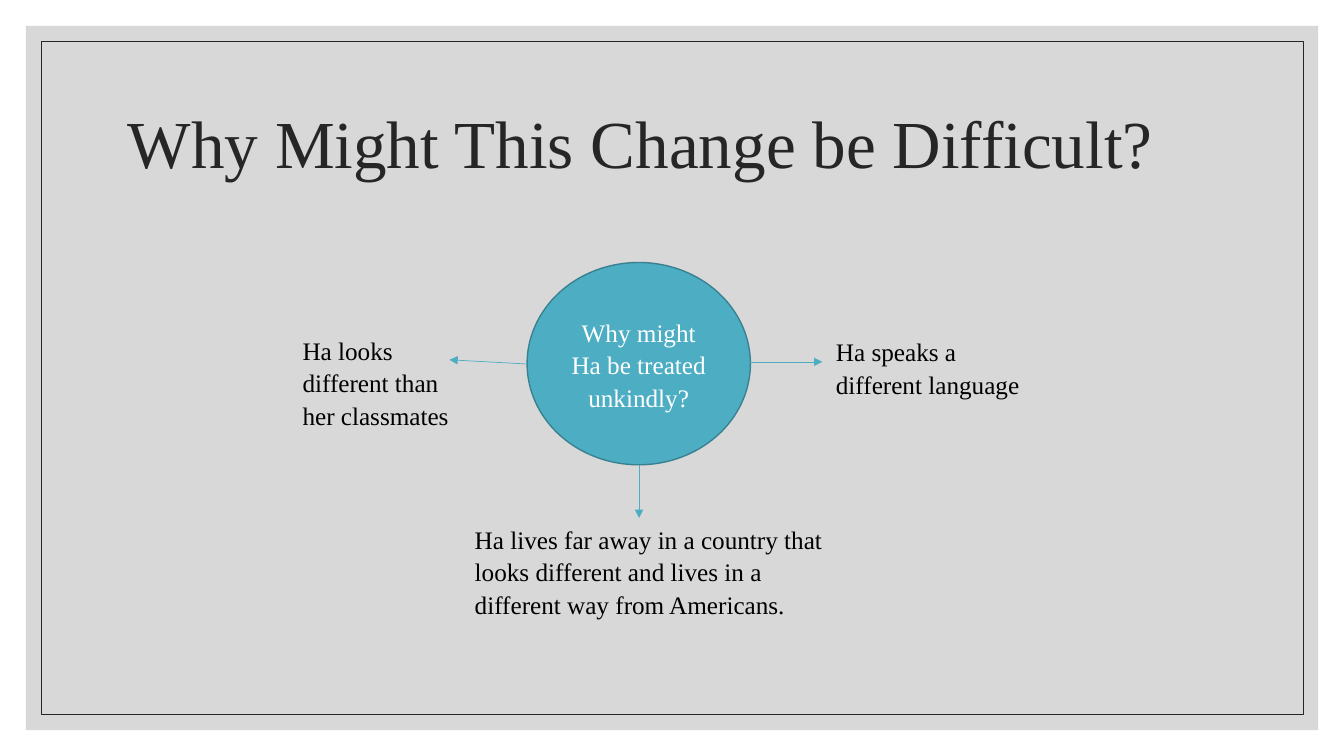
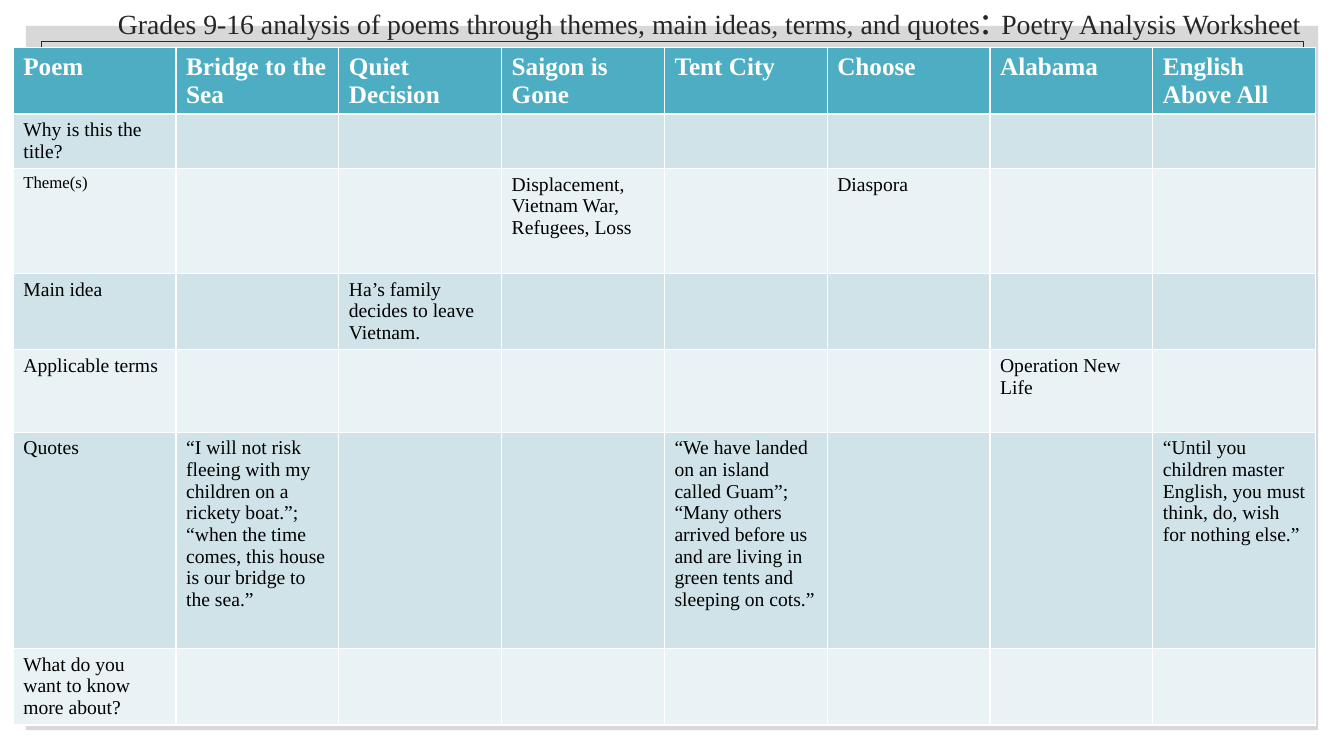
from lxml import etree
from pptx import Presentation
from pptx.dml.color import RGBColor
from pptx.enum.shapes import MSO_CONNECTOR, MSO_SHAPE
from pptx.enum.text import MSO_ANCHOR, MSO_AUTO_SIZE, PP_ALIGN
from pptx.oxml.ns import qn
from pptx.util import Pt

RECT, OVAL = MSO_SHAPE.RECTANGLE, MSO_SHAPE.OVAL
LINE = MSO_CONNECTOR.STRAIGHT
MIDDLE = MSO_ANCHOR.MIDDLE
LEFT, CENTER = PP_ALIGN.LEFT, PP_ALIGN.CENTER
FIXED = MSO_AUTO_SIZE.NONE

FONT = "Times New Roman"
WHITE, BLACK, INK, GREY = "FFFFFF", "000000", "262626", "BFBFBF"
TEAL, EDGE = "4DAEC3", "398190"
BANDS = ["E9F2F5", "D0E3E9"]
SPACING = 1.08

REASONS = [
    ("Ha looks different than her classmates", (209, 234, 123, 73)),
    ("Ha speaks a different language", (590, 235, 159, 51)),
    ("Ha lives far away in a country that looks different and lives in a "
     "different way from Americans.", (332, 369, 265, 73)),
]
ARROWS = [
    (536, 258.5, 587.5, 258.5),
    (376.5, 260, 321, 257),
    (456.5, 332, 456.5, 370),
]

POEMS = ["Poem", "Bridge to the Sea", "Quiet Decision", "Saigon is Gone",
         "Tent City", "Choose", "Alabama", "English Above All"]
TOPICS = [
    ("Why is this the title?", 39, {}),
    ("Theme(s)", 75, {
        "Saigon is Gone": "Displacement, Vietnam War, Refugees, Loss",
        "Choose": "Diaspora"}),
    ("Main idea", 54.5, {
        "Quiet Decision": "Ha’s family decides to leave Vietnam."}),
    ("Applicable terms", 59, {"Alabama": "Operation New Life"}),
    ("Quotes", 154.5, {
        "Bridge to the Sea": "“I will not risk fleeing with my children on a "
        "rickety boat.”; “when the time comes, this house is our bridge to "
        "the sea.”",
        "Tent City": "“We have landed on an island called Guam”; “Many others "
        "arrived before us and are living in green tents and sleeping on "
        "cots.”",
        "English Above All": "“Until you children master English, you must "
        "think, do, wish for nothing else.”"}),
    ("What do you want to know more about?", 54.5, {}),
]


def color(code):
    """Turn a hex string into a colour."""
    return RGBColor.from_string(code)


def points(*sizes):
    """Turn numbers into lengths in points."""
    return [Pt(size) for size in sizes]


def style(run, size, code, bold=False):
    """Set the font of one run."""
    font = run.font
    font.name, font.size, font.bold = FONT, Pt(size), bold
    font.color.rgb = color(code)


def write(frame, text, size, code, align=LEFT, bold=False, spacing=None):
    """Put one styled paragraph into a text frame."""
    frame.text = text
    para = frame.paragraphs[0]
    para.alignment, para.line_spacing = align, spacing
    for run in para.runs:
        style(run, size, code, bold)


def add_form(slide, kind, place, fill=None, edge=None, width=1):
    """Add a flat preset shape."""
    form = slide.shapes.add_shape(kind, *points(*place))
    form.shadow.inherit = False
    if fill:
        form.fill.solid()
        form.fill.fore_color.rgb = color(fill)
    else:
        form.fill.background()
    if edge:
        form.line.color.rgb = color(edge)
        form.line.width = Pt(width)
    else:
        form.line.fill.background()
    return form


def add_slide(deck, parts, place):
    """Add a framed slide whose title is made of (text, size) parts."""
    slide = deck.slides.add_slide(deck.slide_layouts[5])
    title = slide.shapes.title
    panel = add_form(slide, RECT, (18.5, 18.5, 923, 503), GREY)
    tint = panel.element.spPr.find(".//" + qn("a:srgbClr"))
    etree.SubElement(tint, qn("a:alpha"), val="60000")
    border = add_form(slide, RECT, (29.5, 29.5, 901.5, 481), edge=INK, width=0.5)
    for form in (panel, border):
        title.element.addprevious(form.element)
    title.left, title.top, title.width, title.height = points(*place)
    frame = title.text_frame
    frame.auto_size, frame.vertical_anchor = FIXED, MIDDLE
    frame.word_wrap = True
    para = frame.paragraphs[0]
    para.alignment, para.line_spacing = LEFT, 0.9
    for text, size in parts:
        run = para.add_run()
        run.text = text
        style(run, size, INK)
    return slide


def add_note(slide, text, place):
    """Add a wrapped text box."""
    frame = slide.shapes.add_textbox(*points(*place)).text_frame
    frame.word_wrap = True
    write(frame, text, 18, BLACK, spacing=SPACING)


def add_arrow(slide, ends):
    """Add a thin line with an arrowhead at its end."""
    arrow = slide.shapes.add_connector(LINE, *points(*ends))
    arrow.line.color.rgb = color(TEAL)
    arrow.line.width = Pt(0.5)
    etree.SubElement(arrow.line._get_or_add_ln(), qn("a:tailEnd"), type="triangle")
    etree.SubElement(arrow.element.spPr, qn("a:effectLst"))


def fill_cell(cell, text, fill, size, code, bold=False):
    """Colour a table cell and write its text."""
    cell.fill.solid()
    cell.fill.fore_color.rgb = color(fill)
    if text:
        write(cell.text_frame, text, size, code, bold=bold)


def add_grid(slide):
    """Add the table of poems and topics."""
    heights = [47.5] + [height for _, height, _ in TOPICS]
    place = points(9.5, 34, 930.4, sum(heights))
    grid = slide.shapes.add_table(len(heights), len(POEMS), *place).table
    for column in grid.columns:
        column.width = Pt(116.3)
    for row, height in zip(grid.rows, heights):
        row.height = Pt(height)
    for col, poem in enumerate(POEMS):
        fill_cell(grid.cell(0, col), poem, TEAL, 18, WHITE, True)
        for row, (topic, _, notes) in enumerate(TOPICS, 1):
            text = notes.get(poem) if col else topic
            size = 12 if text == "Theme(s)" else 14
            fill_cell(grid.cell(row, col), text, BANDS[row % 2], size, BLACK)


def add_web(deck):
    """Build the slide with the question and its reasons."""
    slide = add_slide(deck, [("Why Might This Change be Difficult?", 48)],
                      (84, 50.5, 792, 108))
    hub = add_form(slide, OVAL, (376.5, 187.5, 159.5, 144.5), TEAL, EDGE)
    hub.text_frame.vertical_anchor = MIDDLE
    write(hub.text_frame, "Why might Ha be treated unkindly?", 18, WHITE,
          CENTER, spacing=SPACING)
    for ends in ARROWS:
        add_arrow(slide, ends)
    for text, place in REASONS:
        add_note(slide, text, place)


def add_sheet(deck):
    """Build the worksheet slide."""
    parts = [("Grades 9-16 analysis of poems through themes, main ideas, "
              "terms, and quotes", 19.8),
             (": ", 28.8), ("Poetry Analysis Worksheet", 19.8)]
    add_grid(add_slide(deck, parts, (77, 4.5, 880, 21)))


def main():
    """Build and save the deck."""
    deck = Presentation()
    deck.slide_width, deck.slide_height = points(960, 540)
    add_web(deck)
    add_sheet(deck)
    deck.save("out.pptx")


if __name__ == "__main__":
    main()
